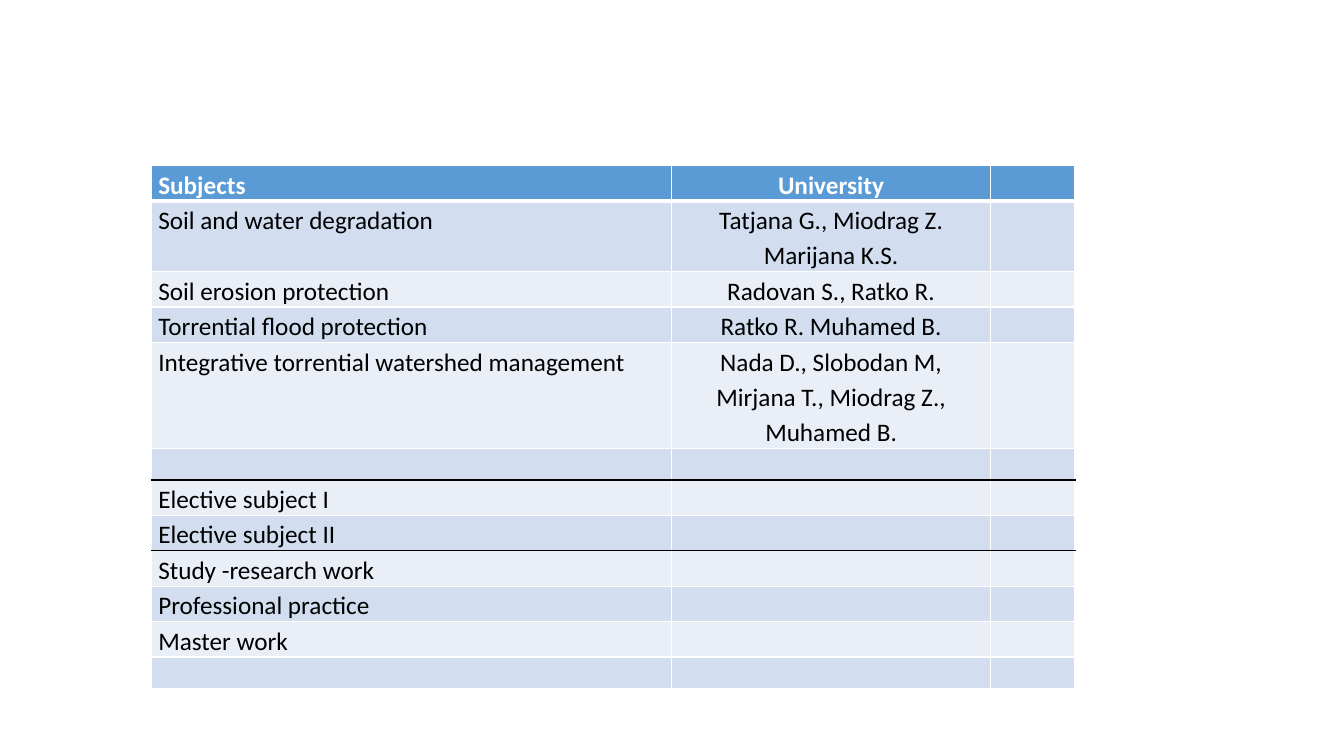
import lxml.etree
import pptx
import pptx.dml.color
import pptx.enum.text
import pptx.oxml.ns
import pptx.util

Cm = pptx.util.Cm
Pt = pptx.util.Pt
ALIGN = pptx.enum.text.PP_ALIGN

COLORS = {
    "header": "5B9BD5",
    "odd_row": "D2DEEF",
    "even_row": "EAEFF7",
    "white": "FFFFFF",
    "black": "000000",
}
COLUMN_WIDTHS = [Cm(13.12), Cm(8.03), Cm(2.13)]
ROW_HEIGHT = Cm(0.79)
ROWS = [
    ("Subjects", "University"),
    ("Soil and water degradation", "Tatjana G., Miodrag Z. Marijana K.S."),
    ("Soil erosion protection", "Radovan S., Ratko R."),
    ("Torrential flood protection", "Ratko R. Muhamed B."),
    ("Integrative torrential watershed management",
     "Nada D., Slobodan M, Mirjana T., Miodrag Z., Muhamed B."),
    ("", ""),
    ("Elective subject I", ""),
    ("Elective subject II", ""),
    ("Study -research work", ""),
    ("Professional practice", ""),
    ("Master work", ""),
    ("", ""),
]
# Rows with a black rule along their bottom edge
RULED_ROWS = {5, 7}


def rgb(name):
    return pptx.dml.color.RGBColor.from_string(COLORS[name])


def write_text(text_frame, text, size=18, color="black", bold=False,
               align=ALIGN.LEFT, line_spacing=1.15):
    paragraph = text_frame.paragraphs[0]
    paragraph.alignment = align
    paragraph.line_spacing = line_spacing
    run = paragraph.add_run()
    run.text = text
    run.font.name = "Calibri"
    run.font.size = Pt(size)
    run.font.bold = bold
    run.font.color.rgb = rgb(color)


def add_border(cell, side, color="white", width=1):
    """Draw one edge of a cell; side is L, R, T or B, added in that order."""
    qn = pptx.oxml.ns.qn
    properties = cell._tc.get_or_add_tcPr()
    line = lxml.etree.SubElement(properties, qn(f"a:ln{side}"), w=str(Pt(width)))
    fill = lxml.etree.SubElement(line, qn("a:solidFill"))
    lxml.etree.SubElement(fill, qn("a:srgbClr"), val=COLORS[color])


def style_cell(cell, row_index):
    cell.margin_left = cell.margin_right = Cm(0.18)
    cell.margin_top = cell.margin_bottom = 0
    add_border(cell, "L")
    add_border(cell, "R")
    top_color = "black" if row_index - 1 in RULED_ROWS else "white"
    add_border(cell, "T", top_color, width=3 if row_index == 1 else 1)
    bottom_color = "black" if row_index in RULED_ROWS else "white"
    add_border(cell, "B", bottom_color, width=3 if row_index == 0 else 1)
    cell.fill.solid()
    band = "odd_row" if row_index % 2 else "even_row"
    cell.fill.fore_color.rgb = rgb("header" if row_index == 0 else band)


def add_subject_table(slide):
    table = slide.shapes.add_table(
        len(ROWS), len(COLUMN_WIDTHS), Cm(3.81), Cm(4.17),
        sum(COLUMN_WIDTHS), ROW_HEIGHT * len(ROWS)).table
    for column, width in zip(table.columns, COLUMN_WIDTHS):
        column.width = width
    for row_index, (row, texts) in enumerate(zip(table.rows, ROWS)):
        row.height = ROW_HEIGHT
        is_header = row_index == 0
        for cell in row.cells:
            style_cell(cell, row_index)
        for cell, text, align in zip(row.cells, texts, (ALIGN.LEFT, ALIGN.CENTER)):
            if text:
                write_text(cell.text_frame, text, align=align, bold=is_header,
                           color="white" if is_header else "black")


def main():
    presentation = pptx.Presentation()
    presentation.slide_width = Cm(33.87)
    presentation.slide_height = Cm(19.05)
    slide = presentation.slides.add_slide(presentation.slide_layouts[6])
    add_subject_table(slide)
    presentation.save("out.pptx")


if __name__ == "__main__":
    main()
